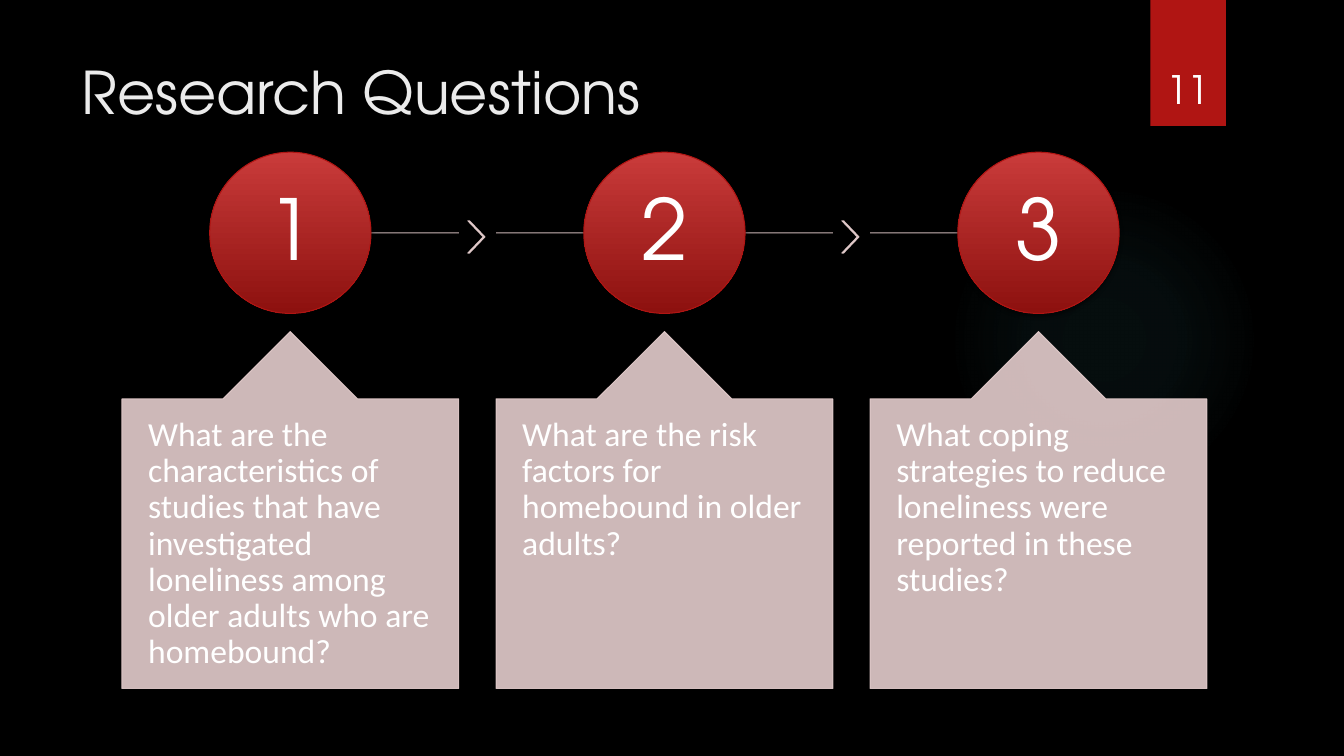
from dataclasses import dataclass

from lxml.etree import SubElement
from pptx import Presentation
from pptx.dml.color import RGBColor
from pptx.enum.shapes import MSO_CONNECTOR as LINK, MSO_SHAPE as PRESET
from pptx.enum.text import MSO_ANCHOR as ANCHOR, PP_ALIGN as ALIGN
from pptx.oxml.ns import qn
from pptx.util import Inches, Pt

COLORS = {
    "background": "000000", "glow": "50B9C1", "accent": "B01513",
    "disc_top": "C93B3A", "disc_bottom": "8D110F", "card": "E4CCCC",
    "title": "EBEBEB", "text": "FFFFFF",
}
HEADING_FONT, BODY_FONT = "TeX Gyre Adventor", "Calibri"
CARD_OPACITY = 90

# Column layout, in inches
FIRST_LEFT, COLUMN_W, COLUMN_GAP = 1.21, 3.34, 0.37
DISC_TOP, DISC_SIZE, NUMBER_SIZE = 1.51, 1.6, 1.13
LINK_Y, CHEVRON_OFFSET = 2.31, 3.43
CARD_TOP, CARD_H, POINTER_H = 3.29, 3.54, 0.67


@dataclass
class Question:
    number: str
    wording: str
    link_from: float  # offsets from the column's left edge
    link_to: float


@dataclass
class Stop:
    position: int
    color: str
    opacity: int = 100


@dataclass
class Style:
    font: dict
    frame: dict
    paragraph: dict


QUESTIONS = [
    Question("1", "What are the characteristics of studies that have investigated "
             "loneliness among older adults who are homebound?", 1.86, COLUMN_W),
    Question("2", "What are the risk factors for homebound in older adults?", 0, COLUMN_W),
    Question("3", "What coping strategies to reduce loneliness were reported "
             "in these studies?", 0, COLUMN_W / 2),
]


def margins(side: float, top: float) -> dict:
    return {"margin_left": Inches(side), "margin_right": Inches(side),
            "margin_top": Inches(top), "margin_bottom": Inches(top)}


TITLE = Style({"name": HEADING_FONT, "size": Pt(42)}, {"vertical_anchor": ANCHOR.TOP}, {})
PAGE = Style({"name": HEADING_FONT, "size": Pt(28)}, {"vertical_anchor": ANCHOR.BOTTOM},
             {"alignment": ALIGN.CENTER})
NUMBER = Style({"name": HEADING_FONT, "size": Pt(60)},
               {"vertical_anchor": ANCHOR.MIDDLE, **margins(0.06, 0.06)},
               {"alignment": ALIGN.CENTER, "line_spacing": 0.9})
WORDING = Style({"name": BODY_FONT, "size": Pt(24)},
                {"vertical_anchor": ANCHOR.TOP, **margins(0.26, 0.18)},
                {"alignment": ALIGN.LEFT, "line_spacing": 0.9})


def apply(target, values: dict) -> None:
    for attribute, value in values.items():
        setattr(target, attribute, value)


def add_color(parent, color: str, opacity: int) -> None:
    rgb = SubElement(parent, qn("a:srgbClr"), val=COLORS[color])
    if opacity < 100:
        SubElement(rgb, qn("a:alpha"), val=str(opacity * 1000))


def paint(fill, color: str, opacity: int = 100) -> None:
    fill.solid()
    fill.fore_color.rgb = RGBColor.from_string(COLORS[color])
    if opacity < 100:
        rgb = next(fill._xPr.iter(qn("a:srgbClr")))
        SubElement(rgb, qn("a:alpha"), val=str(opacity * 1000))


def outline(shape, color: str, opacity: int = 100) -> None:
    shape.line.width = Pt(0.75)
    paint(shape.line.fill, color, opacity)


def paint_gradient(shape, stops: list[Stop], radial: bool = False) -> None:
    shape.fill.gradient()
    gradient = shape._element.spPr.find(qn("a:gradFill"))
    for child in list(gradient):
        gradient.remove(child)
    stop_list = SubElement(gradient, qn("a:gsLst"))
    for stop in stops:
        add_color(SubElement(stop_list, qn("a:gs"), pos=str(stop.position * 1000)),
                  stop.color, stop.opacity)
    if radial:
        center = SubElement(gradient, qn("a:path"), path="circle")
        SubElement(center, qn("a:fillToRect"), l="50000", t="50000", r="50000", b="50000")
    else:
        SubElement(gradient, qn("a:lin"), ang="5400000", scaled="0")


def drop_shadow(shape) -> None:
    effects = shape._element.spPr.find(qn("a:effectLst"))
    shadow = SubElement(effects, qn("a:outerShdw"), blurRad=str(Pt(3)), dist=str(Pt(2)),
                        dir="5400000", rotWithShape="0")
    add_color(shadow, "background", 45)


def add_preset(slide, preset, left: float, top: float, width: float, height: float):
    shape = slide.shapes.add_shape(preset, Inches(left), Inches(top),
                                   Inches(width), Inches(height))
    shape.shadow.inherit = False
    shape.line.fill.background()
    return shape


def add_text(slide, wording: str, left: float, top: float, width: float, height: float,
             style: Style, color: str = "text") -> None:
    frame = slide.shapes.add_textbox(Inches(left), Inches(top),
                                     Inches(width), Inches(height)).text_frame
    apply(frame, {"word_wrap": True, **style.frame})
    paragraph = frame.paragraphs[0]
    apply(paragraph, style.paragraph)
    run = paragraph.add_run()
    run.text = wording
    apply(run.font, style.font)
    run.font.color.rgb = RGBColor.from_string(COLORS[color])


def add_link(slide, start: float, end: float) -> None:
    link = slide.shapes.add_connector(LINK.STRAIGHT, Inches(start), Inches(LINK_Y),
                                      Inches(end), Inches(LINK_Y))
    outline(link, "card", CARD_OPACITY)
    SubElement(link._element.spPr, qn("a:effectLst"))


def add_question(slide, question: Question, left: float, is_last: bool) -> None:
    middle = left + COLUMN_W / 2
    # Link to the next number
    add_link(slide, left + question.link_from, left + question.link_to)
    if not is_last:
        chevron = add_preset(slide, PRESET.CHEVRON, left + CHEVRON_OFFSET, 2.19, 0.17, 0.32)
        chevron.adjustments[0] = 0.9
        paint(chevron.fill, "card", CARD_OPACITY)
        outline(chevron, "card", CARD_OPACITY)
    # Numbered disc
    disc = add_preset(slide, PRESET.OVAL, middle - DISC_SIZE / 2, DISC_TOP,
                      DISC_SIZE, DISC_SIZE)
    paint_gradient(disc, [Stop(0, "disc_top"), Stop(100, "disc_bottom")])
    outline(disc, "accent")
    drop_shadow(disc)
    add_text(slide, question.number, middle - NUMBER_SIZE / 2,
             DISC_TOP + (DISC_SIZE - NUMBER_SIZE) / 2, NUMBER_SIZE, NUMBER_SIZE, NUMBER)
    # Card with the wording
    card = add_preset(slide, PRESET.UP_ARROW_CALLOUT, left, CARD_TOP, COLUMN_W, CARD_H)
    for index, value in enumerate((0.5, 0.2, 0.2, 1)):
        card.adjustments[index] = value
    paint(card.fill, "card", CARD_OPACITY)
    outline(card, "card", CARD_OPACITY)
    add_text(slide, question.wording, left, CARD_TOP + POINTER_H, COLUMN_W,
             CARD_H - POINTER_H, WORDING)


def main() -> None:
    deck = Presentation()
    deck.slide_width, deck.slide_height = Inches(13.33), Inches(7.5)
    slide = deck.slides.add_slide(deck.slide_layouts[6])

    # Backdrop
    paint(slide.background.fill, "background")
    glow = add_preset(slide, PRESET.OVAL, 9.41, 1.83, 3.08, 3.08)
    paint_gradient(glow, [Stop(0, "glow", 7), Stop(36, "glow", 6), Stop(69, "glow", 0)],
                   radial=True)
    ribbon = add_preset(slide, PRESET.RECTANGLE, 11.41, 0, 0.75, 1.25)
    paint(ribbon.fill, "accent")
    drop_shadow(ribbon)

    # Title, questions and page number
    add_text(slide, "Research Questions", 0.71, 0.5, 10.29, 1.53, TITLE, "title")
    for index, question in enumerate(QUESTIONS):
        add_question(slide, question, FIRST_LEFT + index * (COLUMN_W + COLUMN_GAP),
                     is_last=index == len(QUESTIONS) - 1)
    add_text(slide, "11", 11.32, 0.32, 0.92, 0.84, PAGE)

    deck.save("out.pptx")


if __name__ == "__main__":
    main()
